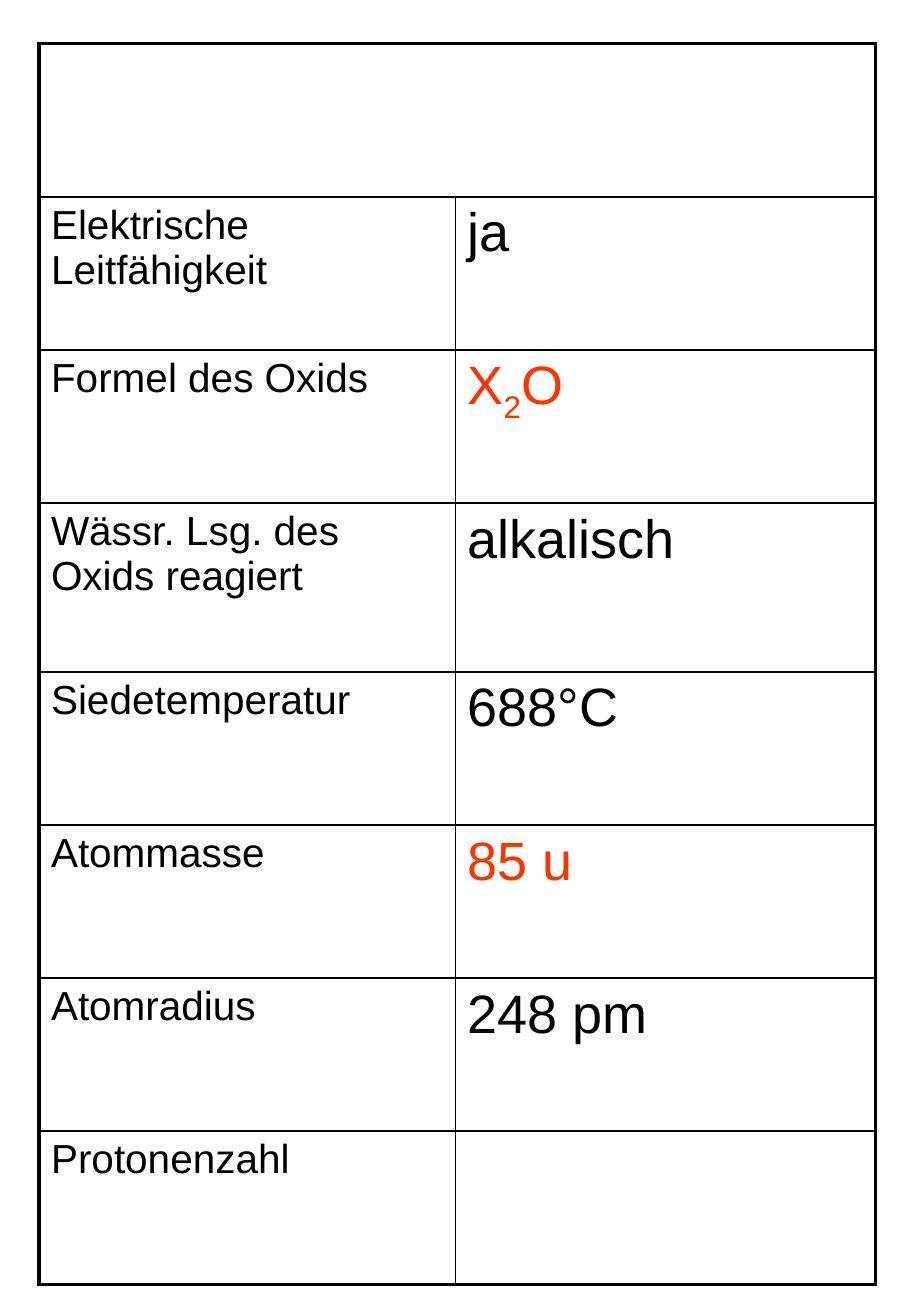
from pptx import Presentation
from pptx.dml.color import RGBColor as RGB
from pptx.oxml import parse_xml
from pptx.oxml.ns import nsdecls
from pptx.util import Inches as In, Pt

BLACK = RGB(0x00, 0x00, 0x00)
RED = RGB(0xFF, 0x33, 0x00)

WIDTH, HEIGHT = 7.5, 10.83
LEFT, TOP = 0.32, 0.36
COLS = [3.43, 3.46]
ROWS = [1.26] * 3 + [1.39] + [1.26] * 4

# Label, runs of the value (text, subscript), colour of the value
PROPERTIES = [
    ("Elektrische Leitfähigkeit", [("ja", False)], BLACK),
    ("Formel des Oxids", [("X", False), ("2", True), ("O", False)], RED),
    ("Wässr. Lsg. des Oxids reagiert", [("alkalisch", False)], BLACK),
    ("Siedetemperatur", [("688°C", False)], BLACK),
    ("Atommasse", [("85 u", False)], RED),
    ("Atomradius", [("248 pm", False)], BLACK),
    ("Protonenzahl", [], BLACK),
]


class Card:
    """Holds the style and the current slide."""

    font, label_size, value_size = "Arial", 24, 32
    outer, inner = 2.25, 1

    def __init__(self, prs):
        self.s = prs.slides.add_slide(prs.slide_layouts[6])

    def table(self, left, top, cols, rows):
        frame = self.s.shapes.add_table(
            len(rows), len(cols), In(left), In(top), In(sum(cols)), In(sum(rows)))
        tbl = frame.table
        tbl.first_row = tbl.horz_banding = False
        for col, width in zip(tbl.columns, cols):
            col.width = In(width)
        for row, height in zip(tbl.rows, rows):
            row.height = In(height)
        last_row, last_col = len(rows) - 1, len(cols) - 1
        for i in range(len(rows)):
            for j in range(len(cols)):
                cell = tbl.cell(i, j)
                cell.fill.background()
                self.borders(cell, {"L": j == 0, "R": j == last_col,
                                    "T": i == 0, "B": i == last_row})
        tbl.cell(0, 0).merge(tbl.cell(0, last_col))
        self.borders(tbl.cell(0, 0), {"L": True, "R": True, "T": True, "B": False})
        return tbl

    def borders(self, cell, edges):
        """Draw the four sides; those on the table's edge are heavier."""
        tc_pr = cell._tc.get_or_add_tcPr()
        for n, (side, on_edge) in enumerate(edges.items()):
            for old in tc_pr.xpath(f"a:ln{side}"):
                tc_pr.remove(old)
            width = Pt(self.outer if on_edge else self.inner)
            tc_pr.insert(n, parse_xml(
                f'<a:ln{side} {nsdecls("a")} w="{width}"><a:solidFill>'
                f'<a:srgbClr val="{BLACK}"/></a:solidFill></a:ln{side}>'))

    def text(self, cell, runs, size, color=BLACK):
        p = cell.text_frame.paragraphs[0]
        for text, subscript in runs:
            r = p.add_run()
            r.text = text
            r.font.name, r.font.size = self.font, Pt(size)
            r.font.color.rgb = color
            if subscript:
                r.font._element.set("baseline", "-25000")


def main():
    prs = Presentation()
    prs.slide_width, prs.slide_height = In(WIDTH), In(HEIGHT)
    card = Card(prs)

    # Grid with an empty heading row
    tbl = card.table(LEFT, TOP, COLS, ROWS)

    # Properties of the element
    for i, (label, value, color) in enumerate(PROPERTIES, start=1):
        card.text(tbl.cell(i, 0), [(label, False)], card.label_size)
        card.text(tbl.cell(i, 1), value, card.value_size, color)

    prs.save("out.pptx")


if __name__ == "__main__":
    main()
